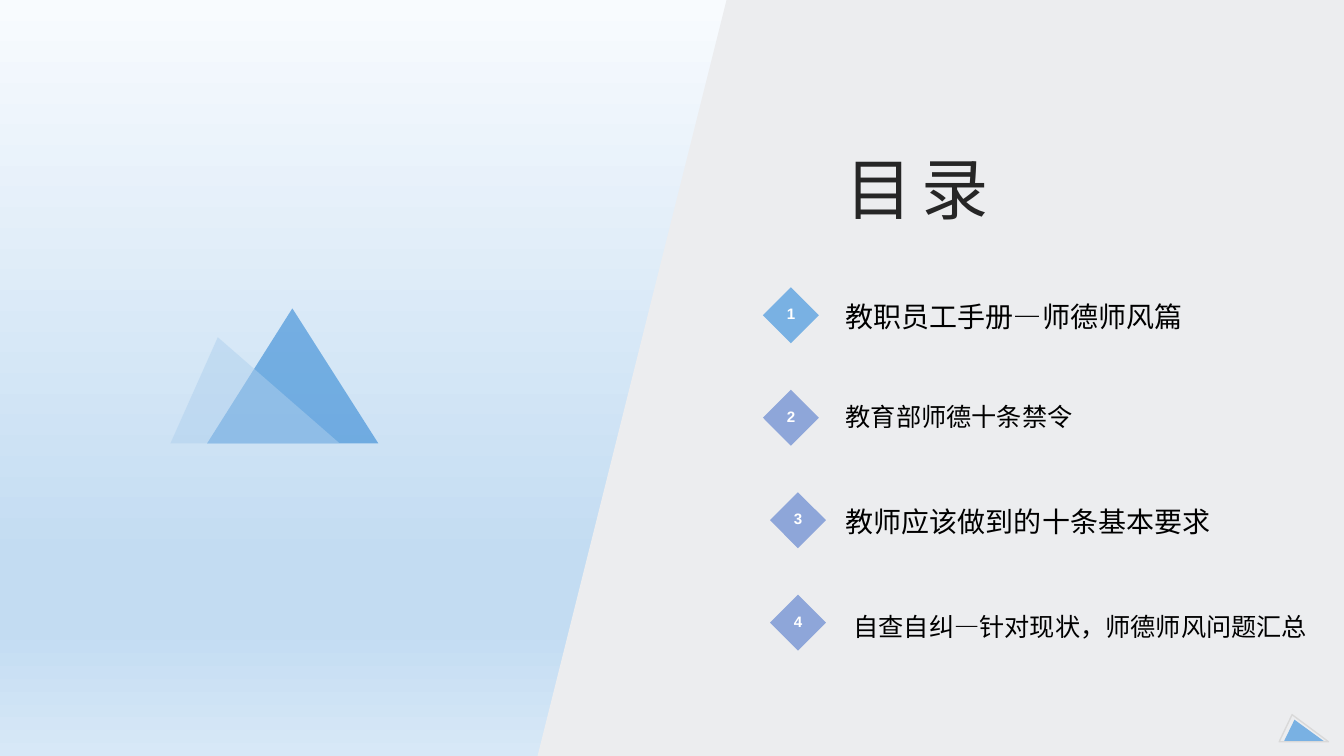
import copy

import pptx
import pptx.dml.color
import pptx.enum.shapes
import pptx.enum.text
import pptx.oxml.ns
import pptx.util

Pt = pptx.util.Pt
SHAPE = pptx.enum.shapes.MSO_SHAPE
ALIGN = pptx.enum.text.PP_ALIGN
ANCHOR = pptx.enum.text.MSO_ANCHOR
qn = pptx.oxml.ns.qn

WIDTH, HEIGHT = 960, 540
FONT = "Arial"
BLUE, VIOLET = "79B1E3", "8EA6D9"
SKY = [(0, "F8FBFE"), (74, "C3DCF2"), (83, "C3DCF2"), (100, "D7E8F7")]

# wording, diamond colour, diamond left, text left, text drop below the
# diamond's top, text width, text height, size, line spacing
ITEMS = [
    ("教职员工手册—师德师风篇", BLUE, 545, 597, -21, 292, 75.6, 20, 1.2),
    ("教育部师德十条禁令", VIOLET, 545, 597, 5, 320, 28.8, 18, 1),
    ("教师应该做到的十条基本要求", VIOLET, 550, 597, -33, 292, 98.6, 20, 1.2),
    ("自查自纠—针对现状，师德师风问题汇总", VIOLET, 550, 602.6, 8, 348, 28.8, 18, 1),
]


def rgb(value):
    return pptx.dml.color.RGBColor.from_string(value)


def add_run(p, text, size, color, bold=False):
    r = p.add_run()
    r.text = text
    r.font.name = FONT
    r.font.size = Pt(size)
    r.font.bold = bold
    r.font.color.rgb = rgb(color)
    return r


def paint(sp, fill=None, alpha=None, line=None):
    sp.shadow.inherit = False
    if fill:
        sp.fill.solid()
        sp.fill.fore_color.rgb = rgb(fill)
    else:
        sp.fill.background()
    if alpha:
        clr = sp.fill._xPr.find(".//" + qn("a:srgbClr"))
        clr.makeelement(qn("a:alpha"))
        pptx.oxml.ns  # namespace helpers stay shared with qn
        node = clr.makeelement(qn("a:alpha"), {"val": str(alpha * 1000)})
        clr.append(node)
    if line:
        sp.line.color.rgb = rgb(line)
        sp.line.width = Pt(1)
    else:
        sp.line.fill.background()


def add_triangle(s, x, y, w, h, peak, **look):
    sp = s.shapes.add_shape(SHAPE.ISOSCELES_TRIANGLE, Pt(x), Pt(y), Pt(w), Pt(h))
    sp.adjustments[0] = peak
    paint(sp, **look)


def add_sky(s):
    fill = s.background.fill
    fill.gradient()
    fill.gradient_angle = 270
    stops = s.element.find(".//" + qn("a:gsLst"))
    for _ in range(len(SKY) - len(stops)):
        stops.append(copy.deepcopy(stops[0]))
    for stop, (position, color) in zip(fill.gradient_stops, SKY):
        stop.position = position / 100
        stop.color.rgb = rgb(color)


def add_panel(s, x, y, w, h, slant):
    fb = s.shapes.build_freeform(Pt(x + slant), Pt(y))
    fb.add_line_segments([(Pt(x + w), Pt(y)), (Pt(x + w), Pt(y + h)), (Pt(x), Pt(y + h))])
    paint(fb.convert_to_shape(), "ECEDEF")


def add_mountains(s, x, y, w, h):
    add_triangle(s, x + w - 122.4, y, 122.4, h, 0.498, fill="3187D4", alpha=60)
    add_triangle(s, x, y + 20.6, 121, h - 20.6, 0.28, fill="AFD0EE", alpha=50)


def add_corner(s, x, y, w, h):
    add_triangle(s, x, y, w, h, 0.262, line="D9D9D9")
    add_triangle(s, x + 3.6, y + 3.6, w - 7.2, h - 4.3, 0.262, fill=BLUE)


def add_title(s, x, y, w, h):
    sp = s.shapes.title
    sp.left, sp.top, sp.width, sp.height = Pt(x), Pt(y), Pt(w), Pt(h)
    tf = sp.text_frame
    tf.auto_size = pptx.enum.text.MSO_AUTO_SIZE.NONE
    tf.vertical_anchor = ANCHOR.TOP
    p = tf.paragraphs[0]
    p.alignment = ALIGN.LEFT
    r = add_run(p, "目录", 48, "262626")
    r.font._element.set("spc", "600")


def add_contents(s, top, pitch, size):
    for i, item in enumerate(ITEMS):
        text, color, left, text_left, drop, w, h, text_size, spacing = item
        y = top + i * pitch

        # Numbered diamond
        sp = s.shapes.add_shape(SHAPE.DIAMOND, Pt(left), Pt(y), Pt(size), Pt(size))
        paint(sp, color)
        tf = sp.text_frame
        tf.vertical_anchor = ANCHOR.MIDDLE
        p = tf.paragraphs[0]
        p.alignment = ALIGN.CENTER
        p.line_spacing = 0.8
        add_run(p, str(i + 1), 10.8, "FFFFFF", bold=True)

        # Chapter name
        tf = s.shapes.add_textbox(Pt(text_left), Pt(y + drop), Pt(w), Pt(h)).text_frame
        tf.word_wrap = True
        tf.vertical_anchor = ANCHOR.MIDDLE
        if spacing > 1:
            tf.margin_bottom = 0
        p = tf.paragraphs[0]
        p.line_spacing = spacing
        add_run(p, text, text_size, "000000")


def build_contents_slide(prs):
    s = prs.slides.add_slide(prs.slide_layouts[5])
    add_sky(s)
    add_panel(s, 384, 0, WIDTH - 384, HEIGHT, 135)
    add_mountains(s, 121.7, 220.3, 148.6, 96.5)
    add_corner(s, 913.7, 510.5, 35.3, 19.4)
    add_title(s, 597, 101.5, 136.8, 60.5)
    add_contents(s, 205.2, 73.2, 40)
    # The panel must lie behind the title
    tree = s.shapes.title.element.getparent()
    tree.append(s.shapes.title.element)


def main():
    prs = pptx.Presentation()
    prs.slide_width, prs.slide_height = Pt(WIDTH), Pt(HEIGHT)
    build_contents_slide(prs)
    prs.save("out.pptx")


if __name__ == "__main__":
    main()
